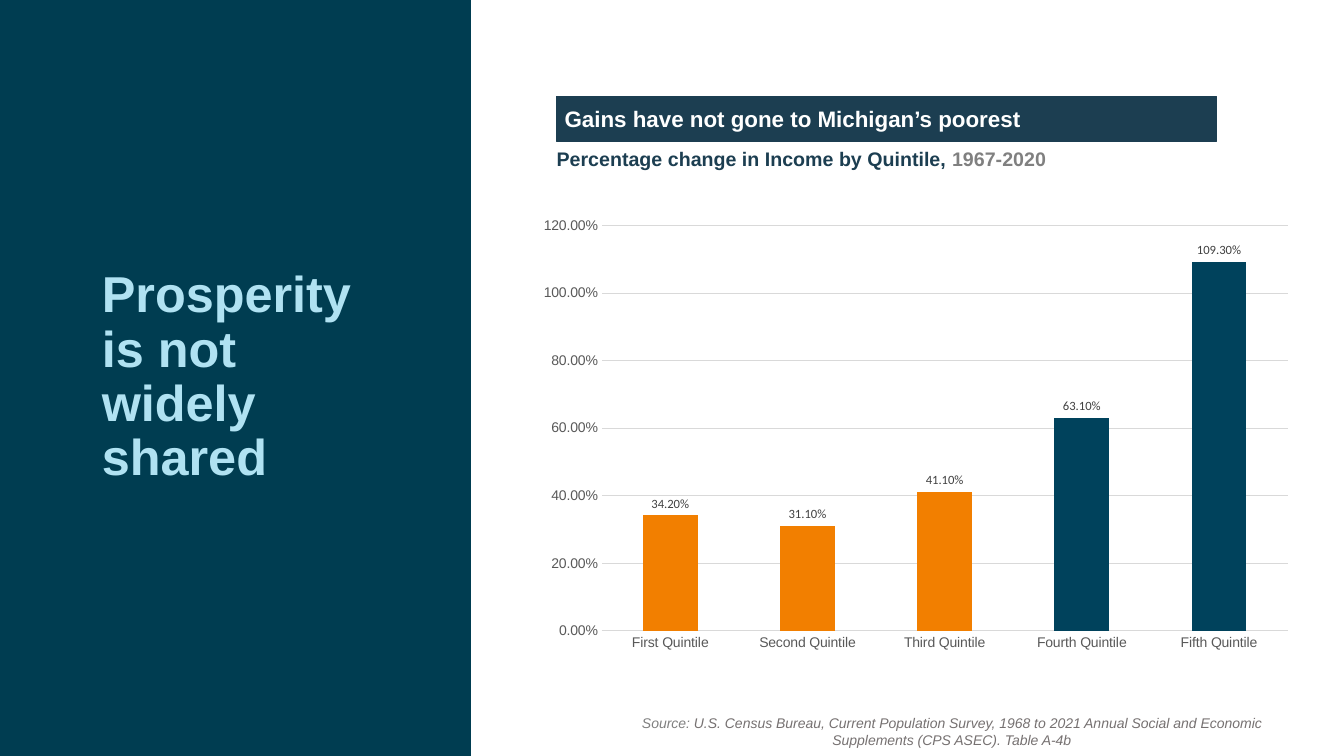
"""Build a slide on Michigan income growth by quintile."""
from lxml.etree import SubElement
from pptx import Presentation
from pptx.chart.data import CategoryChartData
from pptx.dml.color import RGBColor
from pptx.enum.chart import XL_CHART_TYPE, XL_LABEL_POSITION, XL_TICK_MARK
from pptx.enum.shapes import MSO_SHAPE
from pptx.enum.text import MSO_ANCHOR, PP_ALIGN
from pptx.oxml.ns import qn
from pptx.util import Inches, Pt

PANEL = RGBColor(0x00, 0x3D, 0x51)
PALE_BLUE = RGBColor(0xB0, 0xE2, 0xF2)
NAVY = RGBColor(0x1C, 0x3E, 0x51)
WHITE = RGBColor(0xFF, 0xFF, 0xFF)
GREY = RGBColor(0x80, 0x80, 0x80)
SOURCE_GREY = RGBColor(0x76, 0x71, 0x71)
AXIS_GREY = RGBColor(0x59, 0x59, 0x59)
LABEL_GREY = RGBColor(0x40, 0x40, 0x40)
GRID_GREY = RGBColor(0xD9, 0xD9, 0xD9)
ORANGE = RGBColor(0xF2, 0x7F, 0x00)
TEAL = RGBColor(0x00, 0x42, 0x5C)

QUINTILES = [
    ("First Quintile", 0.342, ORANGE),
    ("Second Quintile", 0.311, ORANGE),
    ("Third Quintile", 0.411, ORANGE),
    ("Fourth Quintile", 0.631, TEAL),
    ("Fifth Quintile", 1.093, TEAL),
]
PLOT_AREA = {"x": 0.132, "y": 0.229, "w": 0.841, "h": 0.721}


def style_font(font, size, color, name="Arial"):
    """Set the size, colour and typeface of a font."""
    font.size = Pt(size)
    font.name = name
    font.color.rgb = color


def add_span(para, text, size, color, bold=None, italic=None):
    """Append one formatted run to a paragraph."""
    span = para.add_run()
    span.text = text
    style_font(span.font, size, color)
    span.font.bold = bold
    span.font.italic = italic


def set_insets(frame, inset):
    """Give a text frame the same inset on all sides."""
    frame.margin_left = frame.margin_right = Inches(inset)
    frame.margin_top = frame.margin_bottom = Inches(inset)


def add_block(page, left, top, width, height, color):
    """Add a plain filled rectangle."""
    block = page.shapes.add_shape(
        MSO_SHAPE.RECTANGLE, Inches(left), Inches(top), Inches(width), Inches(height))
    block.shadow.inherit = False
    block.fill.solid()
    block.fill.fore_color.rgb = color
    block.line.fill.background()
    return block


def add_text_box(page, left, top, width, height):
    """Add a wrapping text box and return its frame."""
    box = page.shapes.add_textbox(
        Inches(left), Inches(top), Inches(width), Inches(height))
    box.text_frame.word_wrap = True
    return box.text_frame


def add_title(page):
    """Place the slide title on its dark side panel."""
    title = page.shapes.title
    title.left, title.top = Inches(0.91), Inches(2.25)
    title.width, title.height = Inches(2.84), Inches(3)
    panel = add_block(page, 0, 0, 4.67, 7.5, PANEL)
    title.element.addprevious(panel.element)
    frame = title.text_frame
    frame.word_wrap = True
    frame.vertical_anchor = MSO_ANCHOR.MIDDLE
    para = frame.paragraphs[0]
    para.alignment = PP_ALIGN.LEFT
    para.line_spacing = 0.9
    add_span(para, "Prosperity is not widely shared", 36, PALE_BLUE, bold=True)


def add_heading(page):
    """Add the chart banner and the subtitle under it."""
    banner = add_block(page, 5.52, 0.96, 6.55, 0.44, NAVY)
    banner.line.color.rgb = NAVY
    banner.line.width = Pt(0.75)
    frame = banner.text_frame
    frame.vertical_anchor = MSO_ANCHOR.MIDDLE
    set_insets(frame, 0.08)
    para = frame.paragraphs[0]
    para.alignment = PP_ALIGN.LEFT
    add_span(para, "Gains have not gone to Michigan’s poorest", 16, WHITE, bold=True)

    frame = add_text_box(page, 5.52, 1.46, 6.55, 0.3)
    set_insets(frame, 0)
    para = frame.paragraphs[0]
    para.space_after = Pt(3.1)
    add_span(para, "Percentage change in Income by Quintile, ", 14, NAVY, bold=True)
    add_span(para, "1967-2020", 14, GREY, bold=True)


def add_source(page):
    """Add the centred source note."""
    para = add_text_box(page, 5.96, 7.04, 6.96, 0.44).paragraphs[0]
    para.alignment = PP_ALIGN.CENTER
    add_span(para, "Source: ", 10, GREY, italic=True)
    add_span(para, "U.S. Census Bureau, Current Population Survey, 1968 to 2021 Annual "
             "Social and Economic Supplements (CPS ASEC). Table A-4b",
             10, SOURCE_GREY, italic=True)


def style_line(line):
    """Draw a thin light grey line."""
    line.color.rgb = GRID_GREY
    line.width = Pt(0.75)


def style_axes(chart):
    """Format both axes and the gridlines."""
    for axis in (chart.category_axis, chart.value_axis):
        axis.major_tick_mark = axis.minor_tick_mark = XL_TICK_MARK.NONE
        style_font(axis.tick_labels.font, 10, AXIS_GREY)
    style_line(chart.category_axis.format.line)
    values = chart.value_axis
    values.format.line.fill.background()
    values.minimum_scale, values.maximum_scale, values.major_unit = 0, 1.2, 0.2
    values.tick_labels.number_format = "0.00%"
    values.tick_labels.number_format_is_linked = False
    style_line(values.major_gridlines.format.line)


def fix_plot_area(chart):
    """Pin the inner plot area to fractions of the chart frame."""
    plot_area = chart.element.find(".//" + qn("c:plotArea"))
    layout = plot_area.find(qn("c:layout"))
    if layout is None:
        layout = SubElement(plot_area, qn("c:layout"))
        plot_area.insert(0, layout)
    manual = SubElement(layout, qn("c:manualLayout"))
    settings = {"layoutTarget": "inner", "xMode": "edge", "yMode": "edge", **PLOT_AREA}
    for tag, value in settings.items():
        SubElement(manual, qn("c:" + tag)).set("val", str(value))


def add_income_chart(page):
    """Add the column chart of income change by quintile."""
    names, changes, colors = zip(*QUINTILES)
    data = CategoryChartData(number_format="0.00%")
    data.categories = names
    data.add_series("Series 1", changes)
    chart = page.shapes.add_chart(
        XL_CHART_TYPE.COLUMN_CLUSTERED, Inches(4.9), Inches(0.96),
        Inches(8.09), Inches(5.58), data).chart
    chart.has_legend = chart.has_title = False
    chart.font.name, chart.font.size = "Calibri", Pt(10)
    style_axes(chart)
    fix_plot_area(chart)

    plot = chart.plots[0]
    plot.gap_width = 150
    plot.vary_by_categories = False
    series = plot.series[0]
    for index, color in enumerate(colors):
        fill = series.points[index].format.fill
        fill.solid()
        fill.fore_color.rgb = color
    labels = series.data_labels
    labels.show_value = True
    labels.position = XL_LABEL_POSITION.OUTSIDE_END
    labels.number_format = "0.00%"
    labels.number_format_is_linked = False
    style_font(labels.font, 9, LABEL_GREY, "Calibri")


def main():
    """Create the deck and save it."""
    deck = Presentation()
    deck.slide_width, deck.slide_height = Inches(13.33), Inches(7.5)
    page = deck.slides.add_slide(deck.slide_layouts[5])
    add_title(page)
    add_income_chart(page)
    add_heading(page)
    add_source(page)
    deck.save("out.pptx")


if __name__ == "__main__":
    main()
